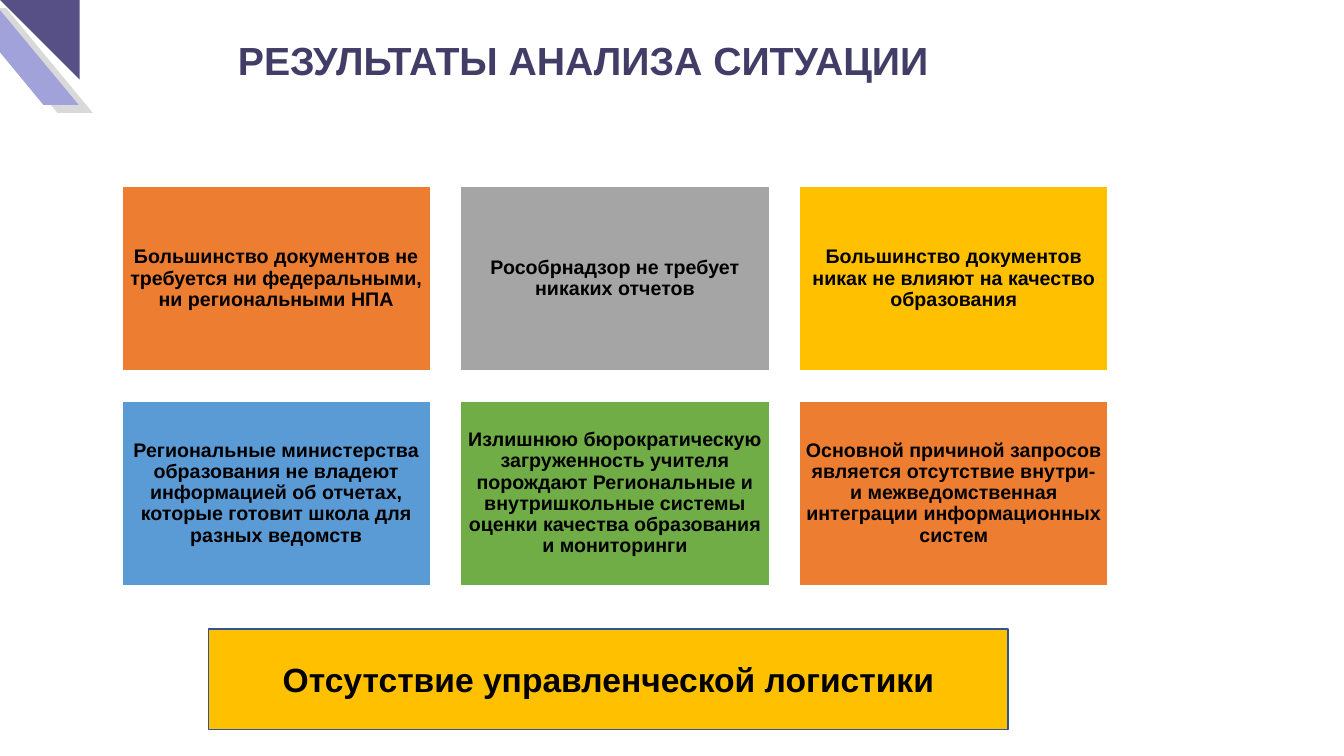
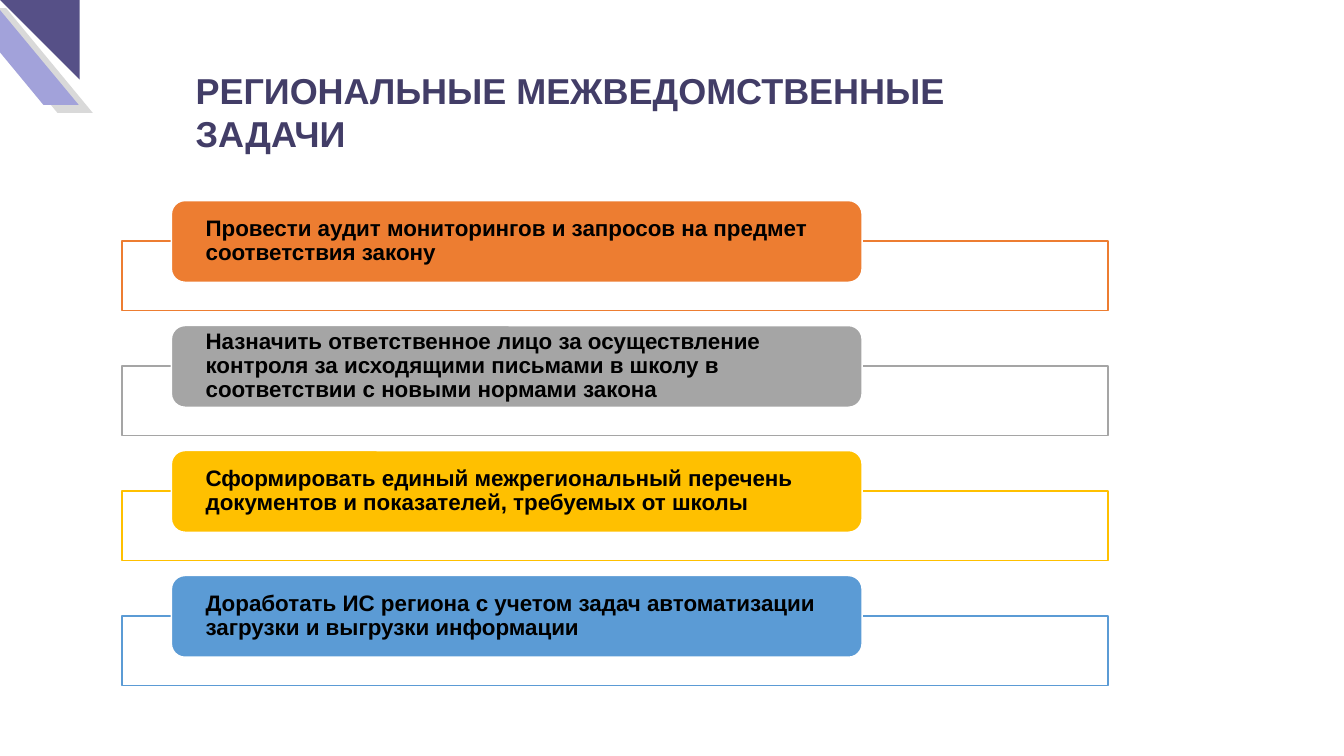
from dataclasses import dataclass
from typing import NamedTuple

from lxml.etree import SubElement
from pptx import Presentation
from pptx.dml.color import RGBColor
from pptx.enum.shapes import MSO_SHAPE
from pptx.enum.text import MSO_ANCHOR, MSO_AUTO_SIZE, PP_ALIGN
from pptx.oxml.ns import qn
from pptx.util import Pt

PX = 9144  # EMU per px, 100 px to the inch


@dataclass(frozen=True)
class Theme:
    font: str = "Arial"
    title: str = "423D67"
    text: str = "000000"
    white: str = "FFFFFF"
    orange: str = "ED7D31"
    grey: str = "A5A5A5"
    gold: str = "FFC000"
    blue: str = "5B9BD5"
    green: str = "70AD47"
    bar_line: str = "325491"
    corner_dark: str = "565087"
    corner_light: str = "A2A2DA"
    corner_shade: str = "D9D9D9"
    title_size: float = 28
    long_title_size: float = 25.7
    tile_size: float = 14
    task_size: float = 16
    bar_size: float = 24


T = Theme()


class Box(NamedTuple):
    left: int
    top: int
    width: int
    height: int

    def emu(self) -> list[int]:
        return [v * PX for v in self]


class Item(NamedTuple):
    text: str
    color: str


@dataclass(frozen=True)
class TextStyle:
    size: float
    color: str = T.text
    align: PP_ALIGN = PP_ALIGN.CENTER
    anchor: MSO_ANCHOR = MSO_ANCHOR.MIDDLE
    spacing: float = 1.0
    insets: tuple[int, int, int, int] = (10, 5, 10, 5)


TILE_TEXT = TextStyle(T.tile_size, spacing=0.9, insets=(6, 6, 6, 6))
TASK_TEXT = TextStyle(T.task_size, align=PP_ALIGN.LEFT, spacing=0.9, insets=(30, 0, 30, 0))
BAR_TEXT = TextStyle(T.bar_size)

FINDINGS = [
    Item("Большинство документов не требуется ни федеральными, ни региональными НПА", T.orange),
    Item("Рособрнадзор не требует никаких отчетов", T.grey),
    Item("Большинство документов никак не влияют на качество образования", T.gold),
    Item("Региональные министерства образования не владеют информацией об отчетах, "
         "которые готовит школа для разных ведомств", T.blue),
    Item("Излишнюю бюрократическую загруженность учителя порождают Региональные и "
         "внутришкольные системы оценки качества образования и мониторинги", T.green),
    Item("Основной причиной запросов является отсутствие внутри- и межведомственная "
         "интеграции информационных систем", T.orange),
]
TASKS = [
    Item("Провести аудит мониторингов и запросов на предмет соответствия закону", T.orange),
    Item("Назначить ответственное лицо за осуществление контроля за исходящими письмами "
         "в школу в соответствии с новыми нормами закона", T.grey),
    Item("Сформировать единый межрегиональный перечень документов и показателей, "
         "требуемых от школы", T.gold),
    Item("Доработать ИС региона с учетом задач автоматизации загрузки и выгрузки "
         "информации", T.blue),
]


def set_all(obj, values: dict) -> None:
    for name, value in values.items():
        setattr(obj, name, value)


def write(shape, text: str, style: TextStyle) -> None:
    tf = shape.text_frame
    left, top, right, bottom = (v * PX for v in style.insets)
    set_all(tf, dict(margin_left=left, margin_top=top, margin_right=right,
                     margin_bottom=bottom, word_wrap=True,
                     auto_size=MSO_AUTO_SIZE.NONE, vertical_anchor=style.anchor))
    p = tf.paragraphs[0]
    set_all(p, dict(alignment=style.align, line_spacing=style.spacing))
    r = p.add_run()
    r.text = text
    set_all(r.font, dict(name=T.font, size=Pt(style.size), bold=True))
    r.font.color.rgb = RGBColor.from_string(style.color)


def paint(shape, fill: str, line: str | None = None) -> None:
    shape.shadow.inherit = False
    shape.fill.solid()
    shape.fill.fore_color.rgb = RGBColor.from_string(fill)
    if line is None:
        shape.line.fill.background()
    else:
        shape.line.color.rgb = RGBColor.from_string(line)
        shape.line.width = Pt(1)


def add_box(s, box: Box, fill: str, line: str, kind: MSO_SHAPE = MSO_SHAPE.RECTANGLE):
    sp = s.shapes.add_shape(kind, *box.emu())
    paint(sp, fill, line)
    return sp


def add_corner(s, layout) -> None:
    """Draw the corner ornament on s and move it to the layout, for all slides."""
    stripes = [
        (T.corner_shade, [(0, 8), (6, 8), (92, 112), (57, 112), (0, 43)]),
        (T.corner_light, [(0, 10), (78, 104), (43, 104), (0, 52)]),
    ]
    parts = []
    for color, points in stripes:
        builder = s.shapes.build_freeform(*points[0], scale=PX)
        builder.add_line_segments(points[1:], close=True)
        stripe = builder.convert_to_shape()
        paint(stripe, color)
        parts.append(stripe)
    triangle = s.shapes.add_shape(MSO_SHAPE.RIGHT_TRIANGLE, *Box(0, 0, 79, 79).emu())
    triangle.rotation = 180
    paint(triangle, T.corner_dark)
    parts.append(triangle)
    for part in parts:
        layout.shapes.element.append(part.element)


def add_title(s, text: str, box: Box, size: float, left_inset: int) -> None:
    title = s.shapes.title
    set_all(title, dict(zip(("left", "top", "width", "height"), box.emu())))
    write(title, text, TextStyle(size, T.title, PP_ALIGN.LEFT, MSO_ANCHOR.TOP,
                                 insets=(left_inset, 5, 10, 5)))


def add_findings(s) -> None:
    for i, item in enumerate(FINDINGS):
        row, col = divmod(i, 3)
        tile = add_box(s, Box(121 + 336 * col, 185 + 213 * row, 306, 183), item.color, T.white)
        write(tile, item.text, TILE_TEXT)
    bar = add_box(s, Box(207, 624, 793, 100), T.gold, T.bar_line)
    write(bar, "Отсутствие управленческой логистики", BAR_TEXT)


def add_tasks(s) -> None:
    for i, item in enumerate(TASKS):
        top = 199 + 124 * i
        frame = add_box(s, Box(121, top + 40, 978, 69), T.white, item.color)
        white = frame.element.spPr.find(f"{qn('a:solidFill')}/{qn('a:srgbClr')}")
        SubElement(white, qn("a:alpha"), val="90000")
        label = add_box(s, Box(170, top, 685, 81), item.color, T.white,
                        MSO_SHAPE.ROUNDED_RECTANGLE)
        write(label, item.text, TASK_TEXT)


def main() -> None:
    prs = Presentation()
    set_all(prs, dict(slide_width=1333 * PX, slide_height=750 * PX))
    layout = prs.slide_layouts[5]

    s = prs.slides.add_slide(layout)
    add_corner(s, layout)
    add_title(s, "РЕЗУЛЬТАТЫ АНАЛИЗА СИТУАЦИИ", Box(236, 31, 796, 57), T.title_size, 0)
    add_findings(s)

    s = prs.slides.add_slide(layout)
    add_title(s, "РЕГИОНАЛЬНЫЕ МЕЖВЕДОМСТВЕННЫЕ ЗАДАЧИ", Box(184, 63, 834, 96),
              T.long_title_size, 10)
    add_tasks(s)

    prs.save("out.pptx")


if __name__ == "__main__":
    main()
